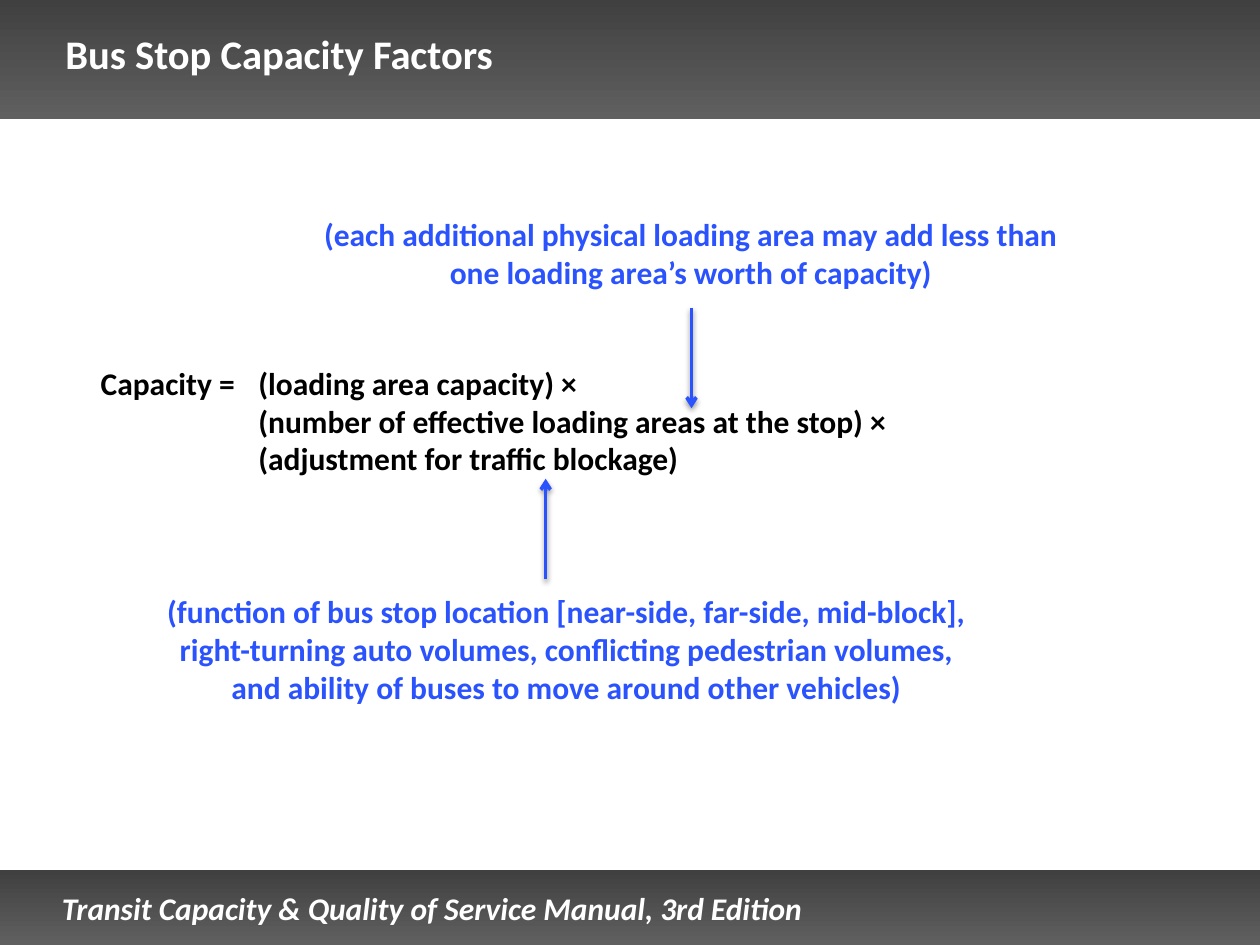
"""Build the slide on bus stop capacity factors."""
from lxml import etree
from pptx import Presentation
from pptx import util as u
from pptx.dml.color import RGBColor
from pptx.enum import shapes, text
from pptx.oxml import ns

WIDTH, HEIGHT = 25.4, 19.05


def rgb(value):
    return RGBColor.from_string(value)


def sub(parent, tag, **attrs):
    return etree.SubElement(parent, ns.qn(tag), attrs)


def write(tf, words, size=18, color="000000", italic=False,
          align=text.PP_ALIGN.LEFT, tab=None, baseline=None):
    tf.word_wrap = True
    p = tf.paragraphs[0]
    p.text = words
    p.alignment = align
    if tab:
        tabs = sub(p._p.get_or_add_pPr(), "a:tabLst")
        sub(tabs, "a:tab", pos=str(u.Cm(tab)), algn="l")
    for r in p.runs:
        r.font.name = "Calibri"
        r.font.size = u.Pt(size)
        r.font.bold = True
        r.font.italic = italic
        r.font.color.rgb = rgb(color)
        if baseline:
            r._r.get_or_add_rPr().set("baseline", str(baseline * 1000))


class Deck:
    """Hold the style and the current slide."""

    white, blue = "FFFFFF", "2B53FD"
    bar_colors = "404040", "606060"

    def __init__(self, prs):
        self.s = prs.slides.add_slide(prs.slide_layouts[5])

    def bar(self, top, height):
        sp = self.s.shapes.add_shape(shapes.MSO_SHAPE.RECTANGLE, 0, u.Cm(top),
                                     u.Cm(WIDTH), u.Cm(height))
        sp.shadow.inherit = False
        sp.line.fill.background()
        sp.fill.gradient()
        sp.fill.gradient_angle = 270
        for stop, color in zip(sp.fill.gradient_stops, self.bar_colors):
            stop.color.rgb = rgb(color)

    def title(self, words, left, top, width, height):
        sp = self.s.shapes.title
        sp.left, sp.top, sp.width, sp.height = map(u.Cm, (left, top, width, height))
        self.s.shapes._spTree.append(sp._element)
        tf = sp.text_frame
        tf.margin_left = tf.margin_right = tf.margin_top = tf.margin_bottom = 0
        tf.vertical_anchor = text.MSO_ANCHOR.MIDDLE
        write(tf, words, size=40, color=self.white, baseline=30)

    def label(self, words, left, top, width, height, **style):
        sp = self.s.shapes.add_textbox(*map(u.Cm, (left, top, width, height)))
        write(sp.text_frame, words, **style)

    def note(self, words, left, top, height):
        self.label(words, left, top, 19.08, height, color=self.blue,
                   align=text.PP_ALIGN.CENTER)

    def arrow(self, x, start, end):
        c = self.s.shapes.add_connector(shapes.MSO_CONNECTOR.STRAIGHT,
                                        *map(u.Cm, (x, start, x, end)))
        c.line.color.rgb = rgb(self.blue)
        c.line.width = u.Pt(2)
        sub(c.line._get_or_add_ln(), "a:tailEnd", type="arrow")
        effects = sub(c._element.spPr, "a:effectLst")
        shadow = sub(effects, "a:outerShdw", blurRad=str(u.Pt(3.1)),
                     dist=str(u.Pt(1.6)), dir="5400000", rotWithShape="0")
        color = sub(shadow, "a:srgbClr", val="000000")
        sub(color, "a:alpha", val="38000")


def main():
    prs = Presentation()
    prs.slide_width, prs.slide_height = u.Cm(WIDTH), u.Cm(HEIGHT)
    deck = Deck(prs)
    deck.bar(17.54, HEIGHT - 17.54)
    deck.bar(0, 2.41)
    deck.label("Transit Capacity & Quality of Service Manual, 3rd Edition",
               1, 17.8, 15.67, 1, color=deck.white, italic=True)
    deck.title("Bus Stop Capacity Factors", 1.32, 0.25, 22.89, 2.01)
    deck.label("Capacity =\t(loading area capacity) ×\n"
               "\t(number of effective loading areas at the stop) ×\n"
               "\t(adjustment for traffic blockage)",
               1.78, 7.21, 21.51, 3.33, tab=3.18)
    deck.arrow(13.94, 6.2, 8.23)
    deck.note("(each additional physical loading area may add less than\n"
              "one loading area’s worth of capacity)", 4.39, 4.22, 1.8)
    deck.arrow(11, 11.68, 9.65)
    deck.note("(function of bus stop location [near-side, far-side, mid-block],\n"
              "right-turning auto volumes, conflicting pedestrian volumes,\n"
              "and ability of buses to move around other vehicles)",
              1.88, 11.81, 2.57)
    prs.save("out.pptx")


if __name__ == "__main__":
    main()
